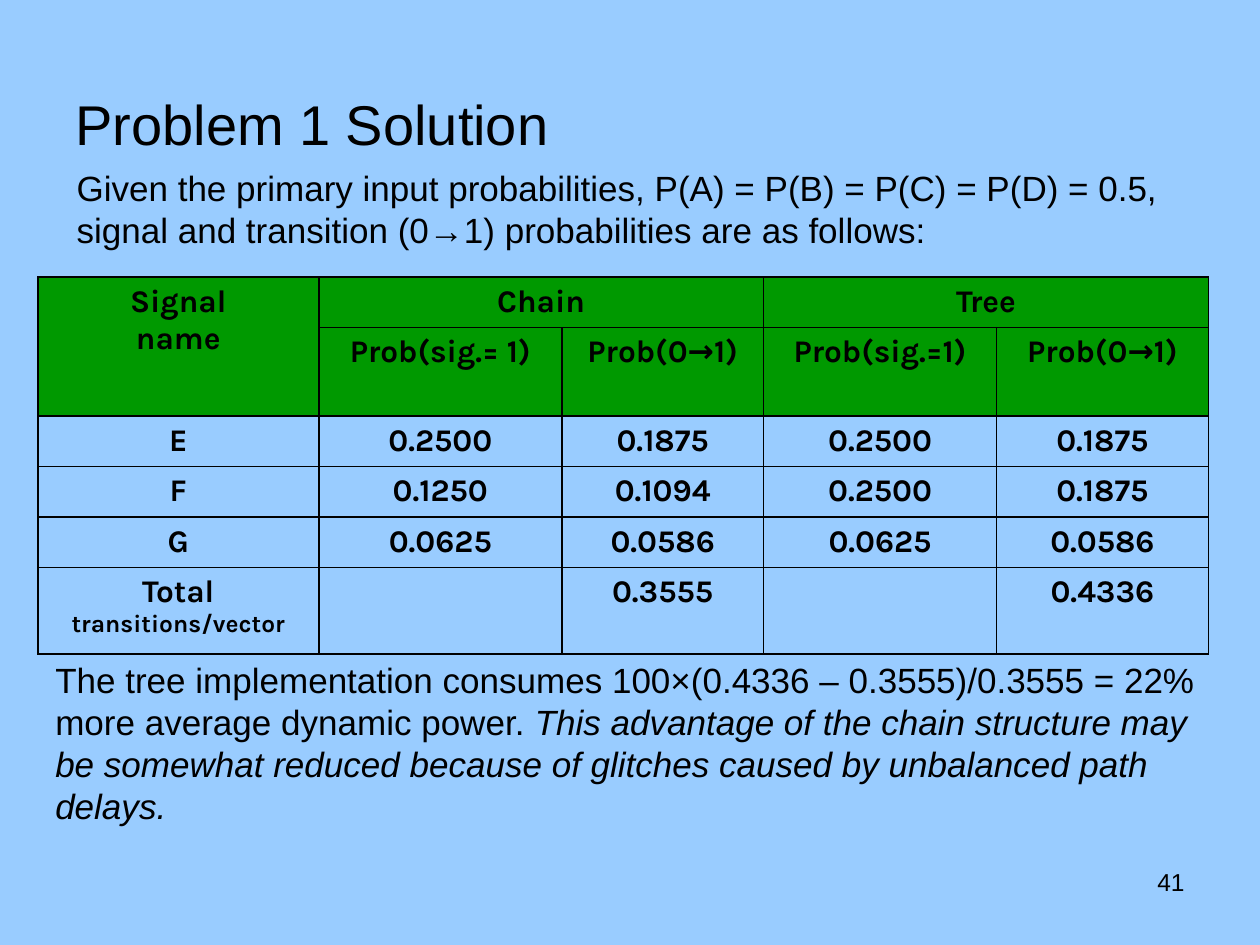
from dataclasses import dataclass

from lxml.etree import SubElement
from pptx import Presentation
from pptx.dml.color import RGBColor
from pptx.enum.text import MSO_ANCHOR, PP_ALIGN
from pptx.oxml.ns import qn
from pptx.util import Inches, Pt


@dataclass(frozen=True)
class Theme:
    """Colours, fonts and type sizes of the slide."""

    background: str = "99CCFF"
    header: str = "009900"
    ink: str = "000000"
    text_font: str = "Arial"
    table_font: str = "Karla"
    title_size: int = 32
    body_size: int = 20
    table_size: int = 18
    small_size: int = 14
    border_width: float = 1


@dataclass(frozen=True)
class Span:
    """A stretch of text in one style."""

    text: str
    size: int
    italic: bool = False


@dataclass(frozen=True)
class TextBlock:
    """A text box with its place and alignment."""

    left: float
    top: float
    width: float
    height: float
    spans: tuple[Span, ...]
    align: PP_ALIGN = PP_ALIGN.LEFT
    anchor: MSO_ANCHOR = MSO_ANCHOR.TOP


THEME = Theme()

BLOCKS = (
    TextBlock(0.5, 0.04, 9, 1.25, (Span("Problem 1 Solution", THEME.title_size),),
              anchor=MSO_ANCHOR.BOTTOM),
    TextBlock(0.51, 1.27, 9.04, 0.77, (
        Span("Given the primary input probabilities, P(A) = P(B) = P(C) = P(D) = 0.5, "
             "signal and transition (0→1) probabilities are as follows:", THEME.body_size),
    )),
    TextBlock(0.34, 5.18, 9.41, 1.43, (
        Span("The tree implementation consumes 100×(0.4336 – 0.3555)/0.3555 = 22% "
             "more average dynamic power. ", THEME.body_size),
        Span("This advantage of the chain structure may be somewhat reduced because of "
             "glitches caused by unbalanced path delays.", THEME.body_size, italic=True),
    ), anchor=MSO_ANCHOR.MIDDLE),
    TextBlock(7.17, 6.83, 2.33, 0.52, (Span("41", THEME.small_size),), PP_ALIGN.RIGHT),
)

COLUMN_WIDTHS = (2.23, 1.93, 1.6, 1.85, 1.68)
ROW_HEIGHTS = (0.4, 0.7, 0.4, 0.4, 0.4, 0.69)
HEADER_ROWS = 2
MERGES = (((0, 0), (1, 0)), ((0, 1), (0, 2)), ((0, 3), (0, 4)))
CELL_TEXTS = (
    ("Signal\nname", "Chain", "", "Tree", ""),
    ("", "Prob(sig.= 1)", "Prob(0→1)", "Prob(sig.=1)", "Prob(0→1)"),
    ("E", "0.2500", "0.1875", "0.2500", "0.1875"),
    ("F", "0.1250", "0.1094", "0.2500", "0.1875"),
    ("G", "0.0625", "0.0586", "0.0625", "0.0586"),
    ("Total ", "", "0.3555", "", "0.4336"),
)
TOTAL_UNIT = "transitions/vector"


def style_font(font, name: str, size: int, bold: bool = False, italic: bool = False) -> None:
    """Apply typeface, size, emphasis and ink colour."""
    font.name = name
    font.size = Pt(size)
    font.bold = bold
    font.italic = italic
    font.color.rgb = RGBColor.from_string(THEME.ink)


def add_text_block(page, block: TextBlock) -> None:
    """Draw a text box made of styled spans."""
    box = page.shapes.add_textbox(Inches(block.left), Inches(block.top),
                                  Inches(block.width), Inches(block.height))
    frame = box.text_frame
    frame.word_wrap = True
    frame.vertical_anchor = block.anchor
    paragraph = frame.paragraphs[0]
    paragraph.alignment = block.align
    for span in block.spans:
        run = paragraph.add_run()
        run.text = span.text
        style_font(run.font, THEME.text_font, span.size, italic=span.italic)


def add_borders(cell) -> None:
    """Draw a solid line on all four sides of a cell."""
    properties = cell._tc.get_or_add_tcPr()
    for side in ("a:lnL", "a:lnR", "a:lnT", "a:lnB"):
        line = SubElement(properties, qn(side), w=str(Pt(THEME.border_width)))
        fill = SubElement(line, qn("a:solidFill"))
        SubElement(fill, qn("a:srgbClr"), val=THEME.ink)


def style_cell(cell, is_header: bool) -> None:
    """Set the borders, fill and text style of a cell."""
    add_borders(cell)
    if is_header:
        cell.fill.solid()
        cell.fill.fore_color.rgb = RGBColor.from_string(THEME.header)
    else:
        cell.fill.background()
    for paragraph in cell.text_frame.paragraphs:
        paragraph.alignment = PP_ALIGN.CENTER
        for run in paragraph.runs:
            style_font(run.font, THEME.table_font, THEME.table_size, bold=True)


def add_probability_table(page) -> None:
    """Draw the table of signal and transition probabilities."""
    table = page.shapes.add_table(
        len(ROW_HEIGHTS), len(COLUMN_WIDTHS), Inches(0.3), Inches(2.2),
        Inches(sum(COLUMN_WIDTHS)), Inches(sum(ROW_HEIGHTS))).table
    table.first_row = False
    table.horz_banding = False
    for column, width in zip(table.columns, COLUMN_WIDTHS):
        column.width = Inches(width)
    for row, height in zip(table.rows, ROW_HEIGHTS):
        row.height = Inches(height)
    for start, end in MERGES:
        table.cell(*start).merge(table.cell(*end))
    for row_index, texts in enumerate(CELL_TEXTS):
        for column_index, text in enumerate(texts):
            cell = table.cell(row_index, column_index)
            if text:
                cell.text_frame.text = text
            style_cell(cell, row_index < HEADER_ROWS)
    total = table.cell(len(ROW_HEIGHTS) - 1, 0).text_frame.paragraphs[0]
    unit = total.add_run()
    unit.text = TOTAL_UNIT
    style_font(unit.font, THEME.table_font, THEME.small_size, bold=True)


def main() -> None:
    """Build and save the slide."""
    deck = Presentation()
    deck.slide_width = Inches(10)
    deck.slide_height = Inches(7.5)
    page = deck.slides.add_slide(deck.slide_layouts[6])
    page.background.fill.solid()
    page.background.fill.fore_color.rgb = RGBColor.from_string(THEME.background)
    for block in BLOCKS:
        add_text_block(page, block)
    add_probability_table(page)
    deck.save("out.pptx")


if __name__ == "__main__":
    main()
